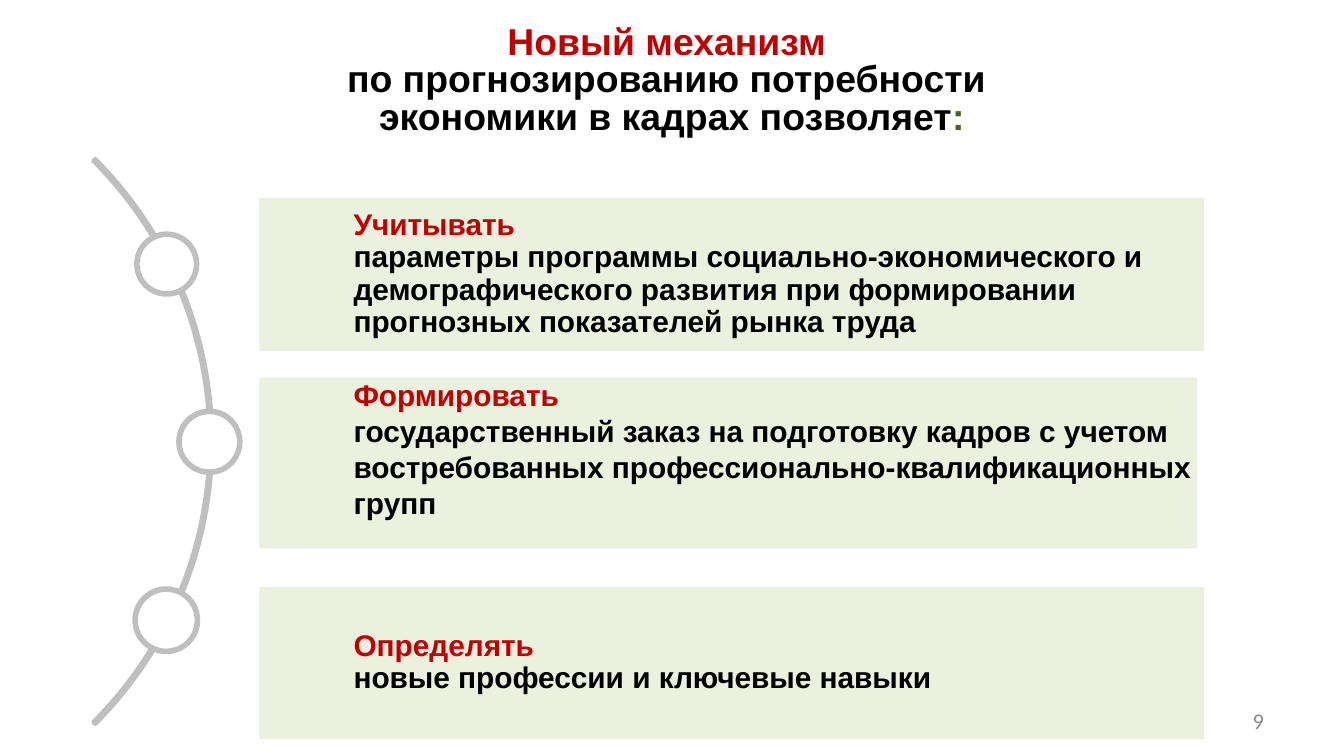
from copy import deepcopy

from pptx import Presentation
from pptx.dml.color import RGBColor
from pptx.enum import shapes, text
from pptx.util import Pt

COLORS = {
    "accent": "C00000",
    "text": "000000",
    "colon": "4F6228",
    "panel": "EBF1DE",
    "marker": "FFFFFF",
    "outline": "BFBFBF",
    "arc": "E46C0A",
    "number": "8C8C8C",
}
PANEL_LEFT = 139
TEXT_INDENT = 50.4
INSET = 2.9

# heading, description, panel (top, width, height), marker (left, top, size), text settings
ITEMS = [
    ("Учитывать ",
     "параметры программы социально-экономического и демографического развития "
     "при формировании прогнозных показателей рынка труда",
     (106, 506, 82), (73.3, 125.5, 32), {"spacing": 0.9}),
    ("Формировать ",
     "государственный заказ на подготовку кадров с учетом востребованных "
     "профессионально-квалификационных групп",
     (202.4, 502.5, 91.4), (95.9, 220.4, 32.6), {"bottom": 18.5}),
    ("Определять ",
     "новые профессии и ключевые навыки",
     (314.5, 506, 81.5), (72.4, 315.6, 33.4), {"spacing": 0.9}),
]


def rgb(name):
    return RGBColor.from_string(COLORS[name])


def add_shape(slide, kind, left, top, width, height, fill, line=None, line_width=0):
    shape = slide.shapes.add_shape(kind, Pt(left), Pt(top), Pt(width), Pt(height))
    shape.shadow.inherit = False
    shape.fill.solid()
    shape.fill.fore_color.rgb = rgb(fill)
    if line:
        shape.line.color.rgb = rgb(line)
        shape.line.width = Pt(line_width)
    else:
        shape.line.fill.background()
    return shape


def write_text(shape, parts, size, font="Arial", bold=True, spacing=1.0,
               align=text.PP_ALIGN.LEFT, insets=(7.2, 3.6, 7.2, 3.6)):
    """Fill one paragraph with (text, color) parts; a newline becomes a line break."""
    frame = shape.text_frame
    frame.word_wrap = True
    frame.auto_size = text.MSO_AUTO_SIZE.NONE
    frame.vertical_anchor = text.MSO_ANCHOR.MIDDLE
    (frame.margin_left, frame.margin_top,
     frame.margin_right, frame.margin_bottom) = map(Pt, insets)
    paragraph = frame.paragraphs[0]
    paragraph.alignment = align
    paragraph.line_spacing = spacing
    for content, color in parts:
        for index, line in enumerate(content.split("\n")):
            if index:
                paragraph.add_line_break()
                # The break takes the format of the run before it.
                paragraph._p[-1].append(deepcopy(run._r.rPr))
            if not line:
                continue
            run = paragraph.add_run()
            run.text = line
            run.font.name = font
            run.font.size = Pt(size)
            run.font.bold = bold
            run.font.color.rgb = rgb(color)


def add_title(slide):
    title = slide.shapes.title
    title.left, title.top, title.width, title.height = map(Pt, (8.6, 9.4, 702.7, 68.4))
    parts = [("Новый механизм \n", "accent"),
             ("по прогнозированию потребности \nэкономики в кадрах позволяет", "text"),
             (":", "colon")]
    write_text(title, parts, 20, spacing=Pt(20.2), align=text.PP_ALIGN.CENTER)


def add_arc(slide):
    arc = add_shape(slide, shapes.MSO_SHAPE.BLOCK_ARC, -314.6, 22.3, 428.4, 428.4,
                    "arc", "outline", 2)
    for index, value in enumerate((189, 27, 0.004)):
        arc.adjustments[index] = value


def add_item(slide, heading, description, panel, marker, spacing=1.0, bottom=INSET):
    top, width, height = panel
    box = add_shape(slide, shapes.MSO_SHAPE.RECTANGLE, PANEL_LEFT, top, width, height, "panel")
    write_text(box, [(heading + "\n", "accent"), (description, "text")], 16,
               spacing=spacing, insets=(TEXT_INDENT, INSET, INSET, bottom))
    left, top, size = marker
    add_shape(slide, shapes.MSO_SHAPE.OVAL, left, top, size, size, "marker", "outline", 3)


def add_slide_number(slide):
    box = slide.shapes.add_textbox(Pt(516.2), Pt(375), Pt(168), Pt(21.6))
    write_text(box, [("9", "number")], 12, font="Calibri", bold=False,
               align=text.PP_ALIGN.RIGHT)


def main():
    presentation = Presentation()
    presentation.slide_width, presentation.slide_height = Pt(720), Pt(405)
    slide = presentation.slides.add_slide(presentation.slide_layouts[5])
    add_title(slide)
    add_arc(slide)
    for heading, description, panel, marker, settings in ITEMS:
        add_item(slide, heading, description, panel, marker, **settings)
    add_slide_number(slide)
    presentation.save("out.pptx")


if __name__ == "__main__":
    main()
